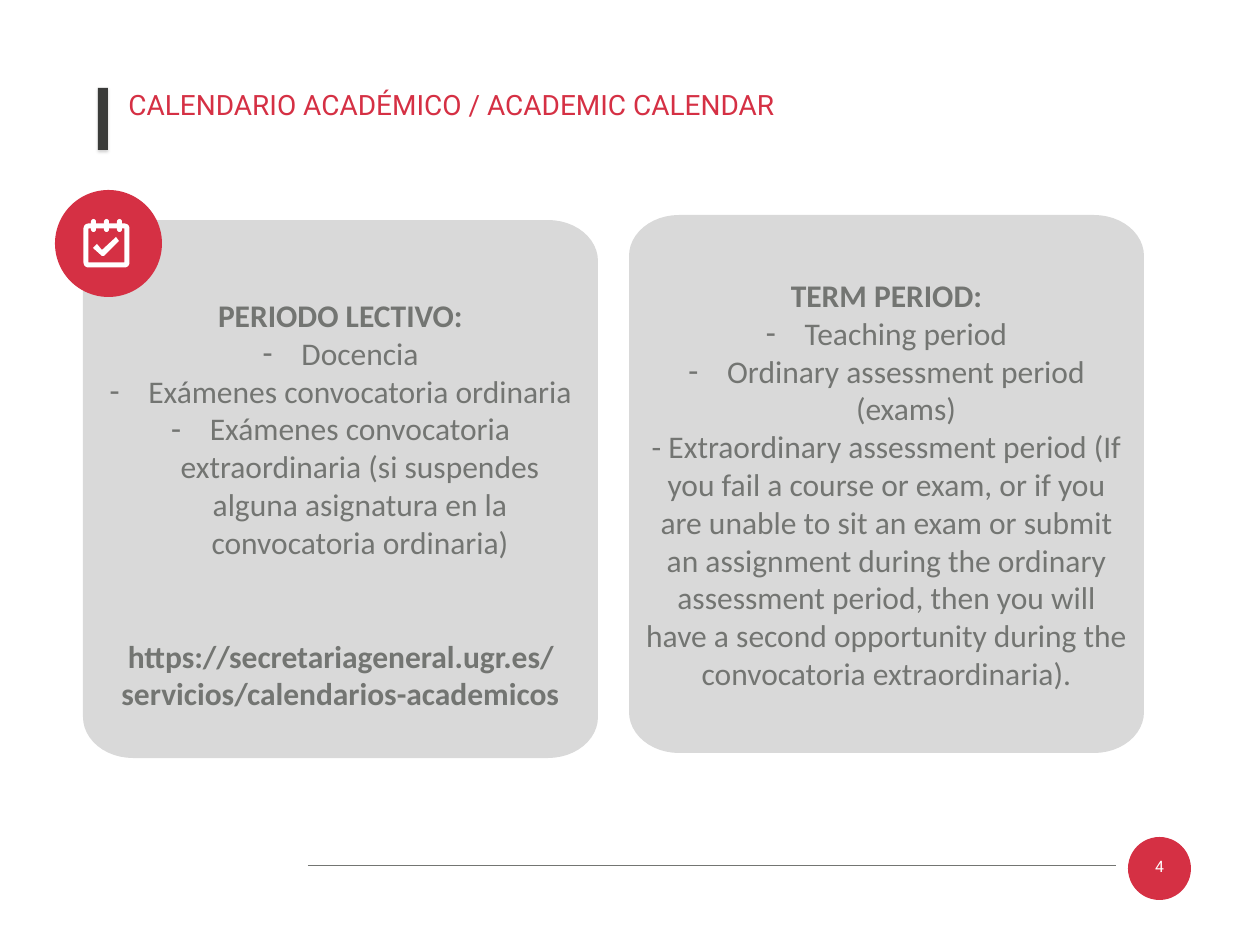
from math import cos, pi, sin

from lxml import etree
from pptx import Presentation
from pptx import util as u
from pptx.dml.color import RGBColor
from pptx.enum import shapes, text
from pptx.oxml import parse_xml
from pptx.oxml.ns import nsdecls, qn

HUES = {"red": "D53044", "dark": "3A3B39", "gray": "737572",
        "card": "D9D9D9", "white": "FFFFFF"}
TITLE = "CALENDARIO ACADÉMICO / ACADEMIC CALENDAR"
PAGE = "4"
# Each line: style, text
CARDS = [
    {"at": (83, 220), "top": 76, "anchor": text.MSO_ANCHOR.TOP, "lines": [
        ("head", "PERIODO LECTIVO:"),
        ("item", "Docencia"),
        ("item", "Exámenes convocatoria ordinaria"),
        ("item", "Exámenes convocatoria extraordinaria (si suspendes alguna "
                 "asignatura en la convocatoria ordinaria)"),
        ("link", "https://secretariageneral.ugr.es/servicios/calendarios-academicos"),
    ]},
    {"at": (629, 215), "top": 0, "anchor": text.MSO_ANCHOR.MIDDLE, "lines": [
        ("head", "TERM PERIOD:"),
        ("item", "Teaching period"),
        ("item", "Ordinary assessment period (exams)"),
        ("plain", "- Extraordinary assessment period (If you fail a course or "
                  "exam, or if you are unable to sit an exam or submit an "
                  "assignment during the ordinary assessment period, then you "
                  "will have a second opportunity during the convocatoria "
                  "extraordinaria)."),
    ]},
]
CARD_W, CARD_H = 515, 538
CURVE_X, CURVE_Y = 50, 41
INDENT, LINK_GAP = 39, 76
CHECK = [(116, 237), (102, 250), (97, 244), (93, 248),
         (102, 256), (104, 256), (119, 241)]
KIND = shapes.MSO_SHAPE


def px(n):
    return u.Emu(round(n * 914400 / 63))


def hue(name):
    return RGBColor.from_string(HUES[name])


def paint(shape, fill):
    shape.shadow.inherit = False
    shape.fill.solid()
    shape.fill.fore_color.rgb = hue(fill)
    shape.line.fill.background()
    return shape


def add(kind, left, top, wide, high, fill):
    return paint(slide.shapes.add_shape(kind, *map(px, (left, top, wide, high))), fill)


def outline(points, fill):
    """Draw a closed polygon from points in px."""
    spots = [(px(x), px(y)) for x, y in points]
    pen = slide.shapes.build_freeform(*spots[0], scale=1.0)
    pen.add_line_segments(spots[1:], close=True)
    return paint(pen.convert_to_shape(), fill)


def round_off(left, top):
    """Give the outline of a card with elliptical corners."""
    mid_x, mid_y = left + CARD_W / 2, top + CARD_H / 2
    points = []
    for turn, (sx, sy) in enumerate([(1, 1), (-1, 1), (-1, -1), (1, -1)]):
        for step in range(13):
            a = (turn + step / 12) * pi / 2
            points.append((mid_x + sx * (CARD_W / 2 - CURVE_X) + CURVE_X * cos(a),
                           mid_y + sy * (CARD_H / 2 - CURVE_Y) + CURVE_Y * sin(a)))
    return points


def style(par, size, font, color, bold=False):
    for run in par.runs:
        run.font.size, run.font.name, run.font.bold = u.Pt(size), font, bold
        run.font.color.rgb = hue(color)


def mark(par, dash):
    """Set a hanging dash, or no bullet at all."""
    props = par._p.get_or_add_pPr()
    props.set("marL", str(px(INDENT) if dash else 0))
    props.set("indent", str(-px(INDENT) if dash else 0))
    if dash:
        etree.SubElement(props, qn("a:buChar")).set("char", "-")
    else:
        etree.SubElement(props, qn("a:buNone"))


def place(box, left, top, wide, high):
    box.left, box.top, box.width, box.height = map(px, (left, top, wide, high))


def fill_card(box, card):
    place(box, *card["at"], CARD_W, CARD_H)
    frame = box.text_frame
    frame.text = "\n".join(line for _, line in card["lines"])
    frame.word_wrap, frame.auto_size = True, text.MSO_AUTO_SIZE.NONE
    frame.vertical_anchor = card["anchor"]
    frame.margin_left = frame.margin_right = px(15)
    frame.margin_top, frame.margin_bottom = px(card["top"]), 0
    for par, (role, _) in zip(frame.paragraphs, card["lines"]):
        par.alignment = text.PP_ALIGN.CENTER
        par.space_before = px(LINK_GAP) if role == "link" else u.Pt(0)
        mark(par, role == "item")
        style(par, 36, "Calibri", "gray", role in ("head", "link"))


deck = Presentation()
deck.slide_width, deck.slide_height = px(1260), px(945)
slide = deck.slides.add_slide(deck.slide_layouts[3])
title, *bodies = list(slide.placeholders)[:3]

# Title and its bar
place(title, 122, 84, 1054, 40)
title.text_frame.text = TITLE
title.text_frame.vertical_anchor = text.MSO_ANCHOR.TOP
title.text_frame.auto_size = text.MSO_AUTO_SIZE.NONE
title.text_frame.paragraphs[0].alignment = text.PP_ALIGN.LEFT
style(title.text_frame.paragraphs[0], 32, "Roboto", "red")
bar = add(KIND.RECTANGLE, 98, 88, 10, 62, "dark")
bar._element.spPr.find(qn("a:effectLst")).append(parse_xml(
    f'<a:outerShdw {nsdecls("a")} blurRad="39370" dist="22860" dir="5400000" '
    'rotWithShape="0"><a:srgbClr val="808080"><a:alpha val="35000"/>'
    '</a:srgbClr></a:outerShdw>'))

# Cards, each behind its text
for box, card in zip(bodies, CARDS):
    panel = outline(round_off(*card["at"]), "card")
    box._element.addprevious(panel._element)
    fill_card(box, card)

# Calendar badge
add(KIND.OVAL, 55, 190, 107, 107, "red")
sheet = add(KIND.ROUNDED_RECTANGLE, 86, 226, 41, 39, "red")
sheet.adjustments[0] = 0.06
sheet.line.color.rgb, sheet.line.width = hue("white"), px(5)
for ring in range(3):
    add(KIND.ROUNDED_RECTANGLE, 91 + 13 * ring, 219, 5, 13, "white").adjustments[0] = 0.5
outline(CHECK, "white")

# Footer
rule = slide.shapes.add_connector(shapes.MSO_CONNECTOR.STRAIGHT,
                                  px(308), px(865), px(1116), px(865))
rule.line.color.rgb, rule.line.width = hue("gray"), u.Pt(0.25)
etree.SubElement(rule._element.spPr, qn("a:effectLst"))
disc = add(KIND.OVAL, 1128, 837, 63, 63, "red")
frame = disc.text_frame
frame.text = PAGE
frame.margin_top, frame.margin_bottom = 0, px(4)
frame.vertical_anchor = text.MSO_ANCHOR.MIDDLE
frame.paragraphs[0].alignment = text.PP_ALIGN.CENTER
style(frame.paragraphs[0], 18, "Roboto", "white")

deck.save("out.pptx")
